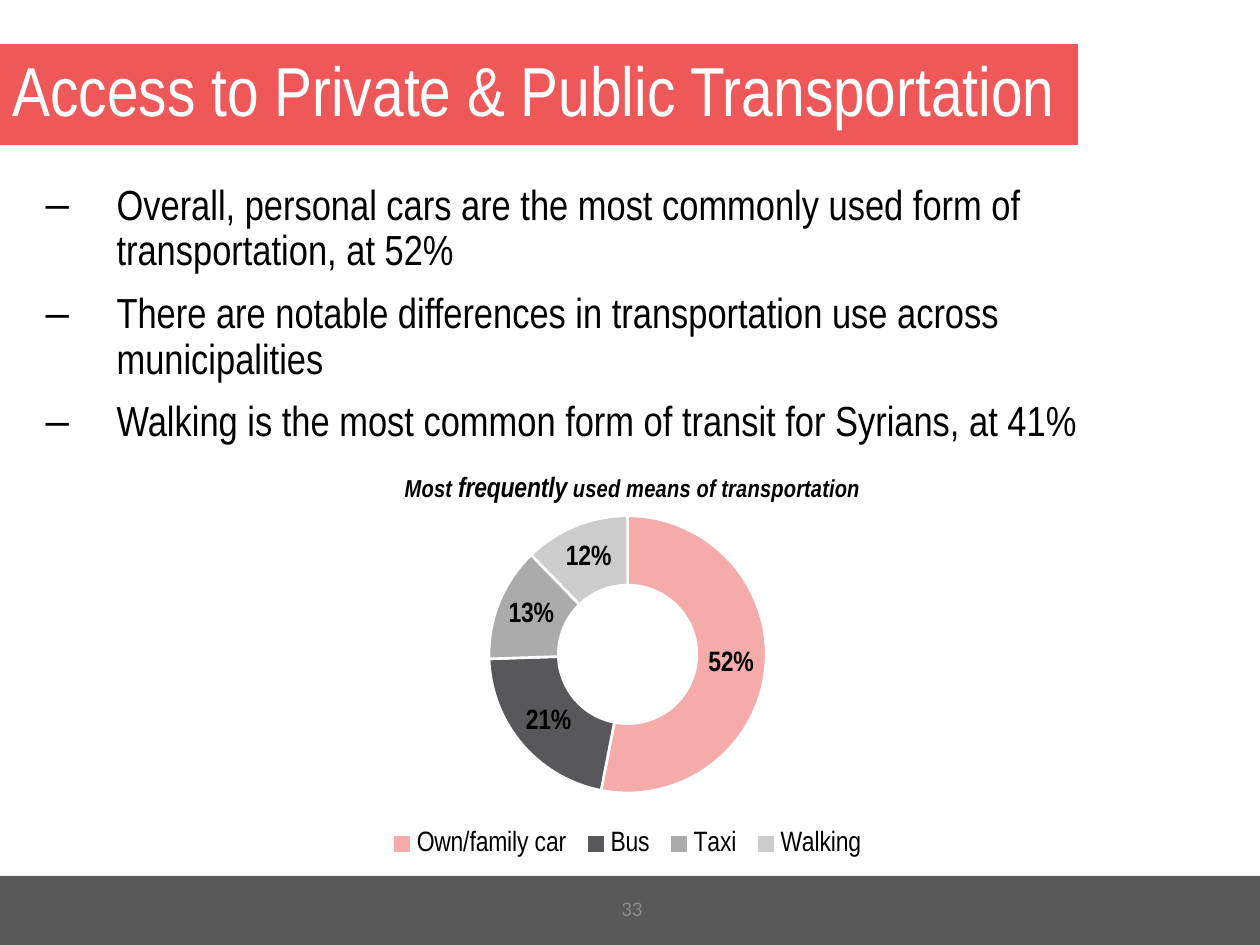
from lxml.etree import SubElement
from pptx import Presentation
from pptx.chart.data import CategoryChartData
from pptx.dml.color import RGBColor
from pptx.enum.chart import XL_CHART_TYPE, XL_LEGEND_POSITION
from pptx.enum.shapes import MSO_SHAPE
from pptx.enum.text import MSO_ANCHOR, MSO_AUTO_SIZE, PP_ALIGN
from pptx.oxml.ns import qn
from pptx.util import Pt

PX = 914400 / 126
FONT = "Arial Narrow"
CORAL = RGBColor(0xEE, 0x58, 0x59)
SLATE = RGBColor(0x58, 0x58, 0x5A)
FOOTER_GRAY = RGBColor(0x59, 0x59, 0x59)
NUMBER_GRAY = RGBColor(0x8C, 0x8C, 0x8C)
WHITE = RGBColor(0xFF, 0xFF, 0xFF)
BLACK = RGBColor(0, 0, 0)


def px(*lengths):
    return [round(length * PX) for length in lengths]


def set_layout(element, index, **fractions):
    """Place a chart part by fractions of the chart area."""
    for old in element.findall(qn("c:layout")):
        element.remove(old)
    layout = element.makeelement(qn("c:layout"), {})
    element.insert(index, layout)
    manual = SubElement(layout, qn("c:manualLayout"))
    if "w" in fractions:
        SubElement(manual, qn("c:layoutTarget"), val="inner")
    for axis in "xy":
        SubElement(manual, qn(f"c:{axis}Mode"), val="edge")
    for key, value in fractions.items():
        SubElement(manual, qn(f"c:{key}"), val=str(value))


prs = Presentation()
prs.slide_width, prs.slide_height = px(1260, 945)
slide = prs.slides.add_slide(prs.slide_layouts[1])
shapes = slide.shapes

# Footer band
footer = shapes.add_shape(MSO_SHAPE.RECTANGLE, *px(0, 876, 1260, 69))
footer.shadow.inherit = False
footer.fill.solid()
footer.fill.fore_color.rgb = FOOTER_GRAY
footer.line.fill.background()

# Title banner
title = shapes.title
title.left, title.top, title.width, title.height = px(0, 44, 1078, 101)
title.fill.solid()
title.fill.fore_color.rgb = CORAL
title.text_frame.auto_size = MSO_AUTO_SIZE.NONE
title.text_frame.vertical_anchor = MSO_ANCHOR.MIDDLE
heading = title.text_frame.paragraphs[0]
heading.alignment = PP_ALIGN.LEFT
heading.line_spacing = 0.9
run = heading.add_run()
run.text = "Access to Private & Public Transportation"
run.font.name, run.font.size = FONT, Pt(39.6)
run.font.color.rgb = WHITE

# Findings
FINDINGS = [
    "Overall, personal cars are the most commonly used form of transportation, at 52%",
    "There are notable differences in transportation use across municipalities",
    "Walking is the most common form of transit for Syrians, at 41%",
]
findings = slide.placeholders[1]
findings.left, findings.top, findings.width, findings.height = px(33, 178, 1198, 660)
frame = findings.text_frame
frame.auto_size = MSO_AUTO_SIZE.NONE
frame.margin_right = px(40)[0]
indent = px(71)[0]
for i, finding in enumerate(FINDINGS):
    paragraph = frame.add_paragraph() if i else frame.paragraphs[0]
    properties = paragraph._p.get_or_add_pPr()
    properties.set("marL", str(indent))
    properties.set("indent", str(-indent))
    SubElement(properties, qn("a:buChar"), char="–")
    paragraph.line_spacing = 0.9
    paragraph.space_before = Pt(10 if i else 0)
    run = paragraph.add_run()
    run.text = finding
    run.font.name, run.font.size = FONT, Pt(24)
    run.font.color.rgb = BLACK

# Transportation doughnut
data = CategoryChartData(number_format="0%")
data.categories = ["Own/family car", "Bus", "Taxi", "Walking"]
data.add_series("Series 1", [0.52, 0.21, 0.13, 0.12])
chart = shapes.add_chart(XL_CHART_TYPE.DOUGHNUT, *px(300, 445, 630, 441), data).chart
chart.font.name, chart.font.size = FONT, Pt(16)
chart.font.color.rgb = BLACK
doughnut = chart.plots[0]
doughnut.vary_by_categories = True
doughnut._element.find(qn("c:holeSize")).set("val", "40")
set_layout(chart._chartSpace.chart.plotArea, 0, x=0.3, y=0.08, w=0.44, h=0.79)

# Slice colours with their opacity in percent
SLICES = [(CORAL, 50), (SLATE, 100), (SLATE, 50), (SLATE, 30)]
for i, (color, opacity) in enumerate(SLICES):
    slice_format = doughnut.series[0].points[i].format
    slice_format.fill.solid()
    slice_format.fill.fore_color.rgb = color
    slice_format.line.color.rgb = WHITE
    slice_format.line.width = Pt(1.5)
    if opacity < 100:
        color_element = slice_format.fill._xPr.find(qn("a:solidFill"))[0]
        SubElement(color_element, qn("a:alpha"), val=str(opacity * 1000))

# Value labels
labels = doughnut.series[0].data_labels
labels.show_value = True
labels.show_percentage = False
labels.number_format, labels.number_format_is_linked = "0%", False
labels.font.name, labels.font.size, labels.font.bold = FONT, Pt(16), True
labels.font.color.rgb = BLACK

# Chart title
chart.has_title = True
caption = chart.chart_title.text_frame.paragraphs[0]
for text, size in [("Most ", 14), ("frequently", 16), (" used means of transportation", 14)]:
    run = caption.add_run()
    run.text = text
    run.font.name, run.font.size = FONT, Pt(size)
    run.font.bold = run.font.italic = True
    run.font.color.rgb = BLACK
set_layout(chart.chart_title._element, 1, x=0.16, y=0.06)

# Legend
chart.has_legend = True
legend = chart.legend
legend.position = XL_LEGEND_POSITION.BOTTOM
legend.include_in_layout = False
legend.font.name, legend.font.size = FONT, Pt(16)
legend.font.color.rgb = BLACK
# Room for all four entries on one row
set_layout(legend._element, 1, x=0.13, y=0.86, w=0.78, h=0.09)
legend._element.find(".//" + qn("c:layoutTarget")).getparent().remove(
    legend._element.find(".//" + qn("c:layoutTarget")))

# Page number
page_number = shapes.add_textbox(*px(490, 883, 284, 50)).text_frame
page_number.word_wrap = True
page_number.vertical_anchor = MSO_ANCHOR.MIDDLE
page_number.paragraphs[0].alignment = PP_ALIGN.CENTER
run = page_number.paragraphs[0].add_run()
run.text = "33"
run.font.name, run.font.size = "Calibri", Pt(12)
run.font.color.rgb = NUMBER_GRAY

prs.save("out.pptx")
